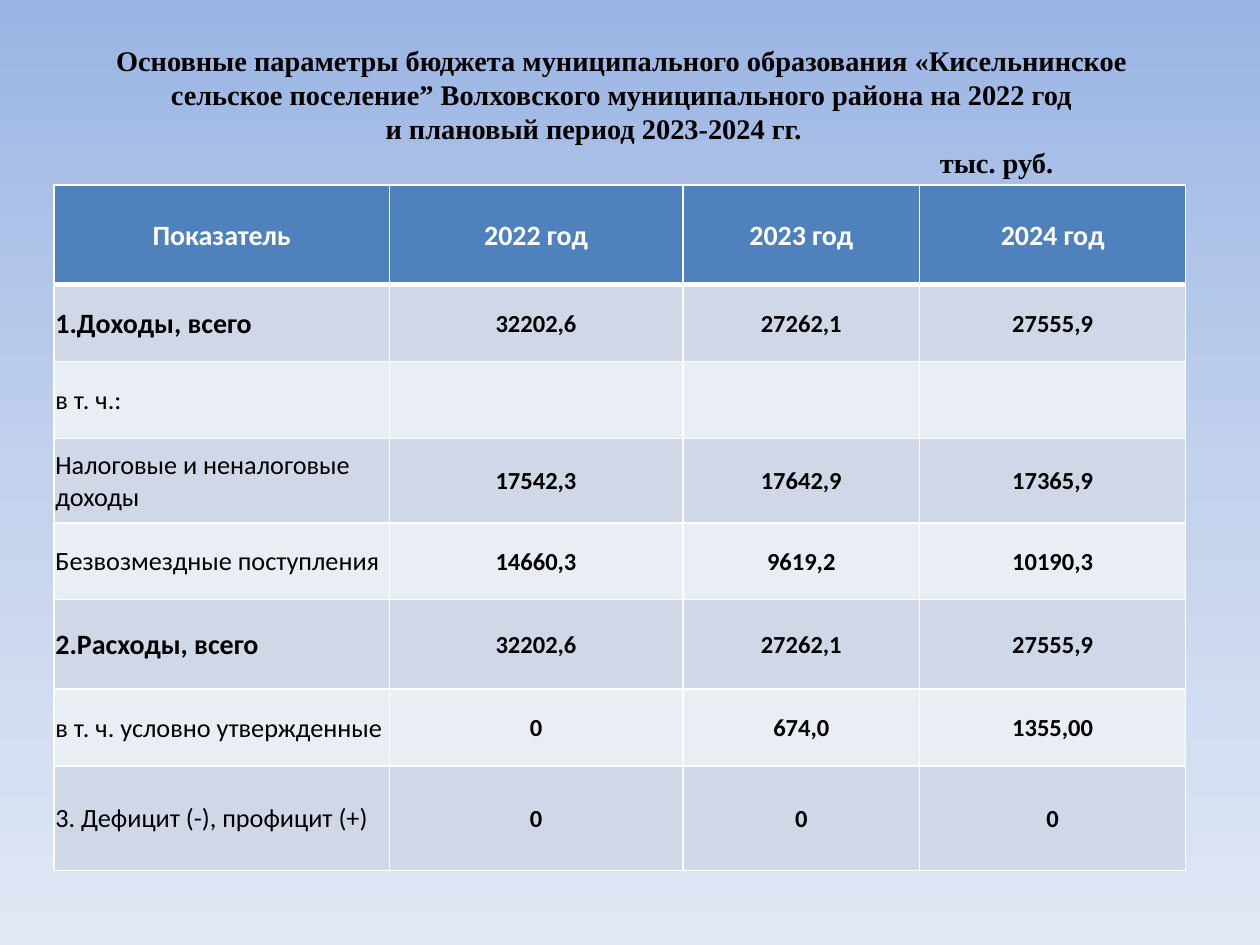
from copy import deepcopy

from lxml import etree
from pptx import Presentation
from pptx import util as u
from pptx.dml.color import RGBColor
from pptx.enum import text
from pptx.oxml.ns import qn

WHITE = RGBColor(0xFF, 0xFF, 0xFF)
BLACK = RGBColor(0x00, 0x00, 0x00)
HEADER_BLUE = RGBColor(0x4F, 0x81, 0xBD)
BANDS = (RGBColor(0xD0, 0xD8, 0xE8), RGBColor(0xE9, 0xED, 0xF4))
SKY = ((0, RGBColor(0x9A, 0xB5, 0xE4)), (0.5, RGBColor(0xC2, 0xD1, 0xED)),
       (1, RGBColor(0xE1, 0xE8, 0xF5)))

TITLE_FORMAT = {"name": "Times New Roman", "size": u.Pt(16.2), "bold": True}
HEADER_FORMAT = {"name": "Calibri", "size": u.Pt(16), "bold": True}
TOTAL_FORMAT = HEADER_FORMAT
LABEL_FORMAT = {"name": "Calibri", "size": u.Pt(15), "bold": False}
VALUE_FORMAT = {"name": "Calibri", "size": u.Pt(14), "bold": True}
CELL_FORMAT = {"vertical_anchor": text.MSO_ANCHOR.MIDDLE,
               "margin_left": u.Inches(0.01), "margin_right": u.Inches(0.01),
               "margin_top": u.Inches(0.01), "margin_bottom": 0}

TITLE_LINES = (
    ("Основные параметры бюджета муниципального образования «Кисельнинское "
     "сельское поселение” Волховского муниципального района на 2022 год", None),
    ("и плановый период 2023-2024 гг.", 2.53),
    ("тыс. руб.", 6.93),
)
COLUMN_WIDTHS = (2.66, 2.33, 1.88, 2.11)
ROW_HEIGHTS = (0.79, 0.61, 0.61, 0.67, 0.61, 0.71, 0.61, 0.83)
BUDGET = (
    ("Показатель", "2022 год", "2023 год", "2024 год"),
    ("1.Доходы, всего", "32202,6", "27262,1", "27555,9"),
    ("в т. ч.:", "", "", ""),
    ("Налоговые и неналоговые доходы", "17542,3", "17642,9", "17365,9"),
    ("Безвозмездные поступления", "14660,3", "9619,2", "10190,3"),
    ("2.Расходы, всего", "32202,6", "27262,1", "27555,9"),
    ("в т. ч. условно утвержденные", "0", "674,0", "1355,00"),
    ("3. Дефицит (-), профицит (+)", "0", "0", "0"),
)
TOTAL_ROWS = (1, 5)


def apply_format(target, values):
    """Set each attribute in values on the target."""
    for name, value in values.items():
        setattr(target, name, value)


def paint_background(slide):
    """Fill the slide with a three-stop vertical gradient."""
    fill = slide.background.fill
    fill.gradient()
    fill.gradient_angle = 270
    stop_list = slide.element.find(".//" + qn("a:gsLst"))
    stop_list.insert(1, deepcopy(stop_list[0]))
    for stop, (position, color) in zip(fill.gradient_stops, SKY):
        stop.position = position
        stop.color.rgb = color


def place_title(slide, box):
    """Place the heading and its unit line in the title placeholder."""
    title = slide.shapes.title
    title.left, title.top, title.width, title.height = map(u.Inches, box)
    frame = title.text_frame
    apply_format(frame, {"word_wrap": True, "auto_size": text.MSO_AUTO_SIZE.NONE,
                         "vertical_anchor": text.MSO_ANCHOR.MIDDLE})
    frame.text = "\n".join(line for line, _ in TITLE_LINES)
    for paragraph, (_, indent) in zip(frame.paragraphs, TITLE_LINES):
        paragraph.line_spacing = u.Pt(19.4)
        paragraph.alignment = text.PP_ALIGN.CENTER
        if indent is not None:
            paragraph.alignment = text.PP_ALIGN.LEFT
            properties = paragraph._p.get_or_add_pPr()
            properties.set("marL", str(u.Inches(indent)))
            properties.set("indent", "0")
        apply_format(paragraph.runs[0].font, TITLE_FORMAT)
        paragraph.runs[0].font.color.rgb = BLACK


def add_borders(cell, top, bottom):
    """Give a cell white borders, with top and bottom widths in points."""
    properties = cell._tc.get_or_add_tcPr()
    widths = {"a:lnL": 1, "a:lnR": 1, "a:lnT": top, "a:lnB": bottom}
    for index, (tag, width) in enumerate(widths.items()):
        line = etree.Element(qn(tag), w=str(u.Pt(width)))
        solid = etree.SubElement(line, qn("a:solidFill"))
        etree.SubElement(solid, qn("a:srgbClr"), val=str(WHITE))
        properties.insert(index, line)


def cell_font(row, column):
    """Return the font values for a table position."""
    if row == 0:
        return HEADER_FORMAT
    if column > 0:
        return VALUE_FORMAT
    return TOTAL_FORMAT if row in TOTAL_ROWS else LABEL_FORMAT


def fill_cell(cell, row, column, content):
    """Write and format one budget cell."""
    apply_format(cell, CELL_FORMAT)
    cell.fill.solid()
    cell.fill.fore_color.rgb = BANDS[(row - 1) % 2] if row else HEADER_BLUE
    add_borders(cell, 3 if row == 1 else 1, 1 if row else 3)
    cell.text = content
    paragraph = cell.text_frame.paragraphs[0]
    centred = row == 0 or column > 0
    paragraph.alignment = text.PP_ALIGN.CENTER if centred else text.PP_ALIGN.LEFT
    for run in paragraph.runs:
        apply_format(run.font, cell_font(row, column))
        run.font.color.rgb = BLACK if row else WHITE


def place_budget_table(slide, box):
    """Place the table of budget figures in the box."""
    table = slide.shapes.add_table(
        len(BUDGET), len(COLUMN_WIDTHS), *map(u.Inches, box)).table
    for column, width in zip(table.columns, COLUMN_WIDTHS):
        column.width = u.Inches(width)
    for row, height in zip(table.rows, ROW_HEIGHTS):
        row.height = u.Inches(height)
    for row, contents in enumerate(BUDGET):
        for column, content in enumerate(contents):
            fill_cell(table.cell(row, column), row, column, content)


def main():
    """Build and save the budget slide."""
    presentation = Presentation()
    presentation.slide_width = u.Inches(10)
    presentation.slide_height = u.Inches(7.5)
    slide = presentation.slides.add_slide(presentation.slide_layouts[5])
    paint_background(slide)
    place_title(slide, (0.43, 0.29, 9, 1.18))
    place_budget_table(slide, (0.43, 1.47, 8.98, 5.44))
    presentation.save("out.pptx")


if __name__ == "__main__":
    main()
